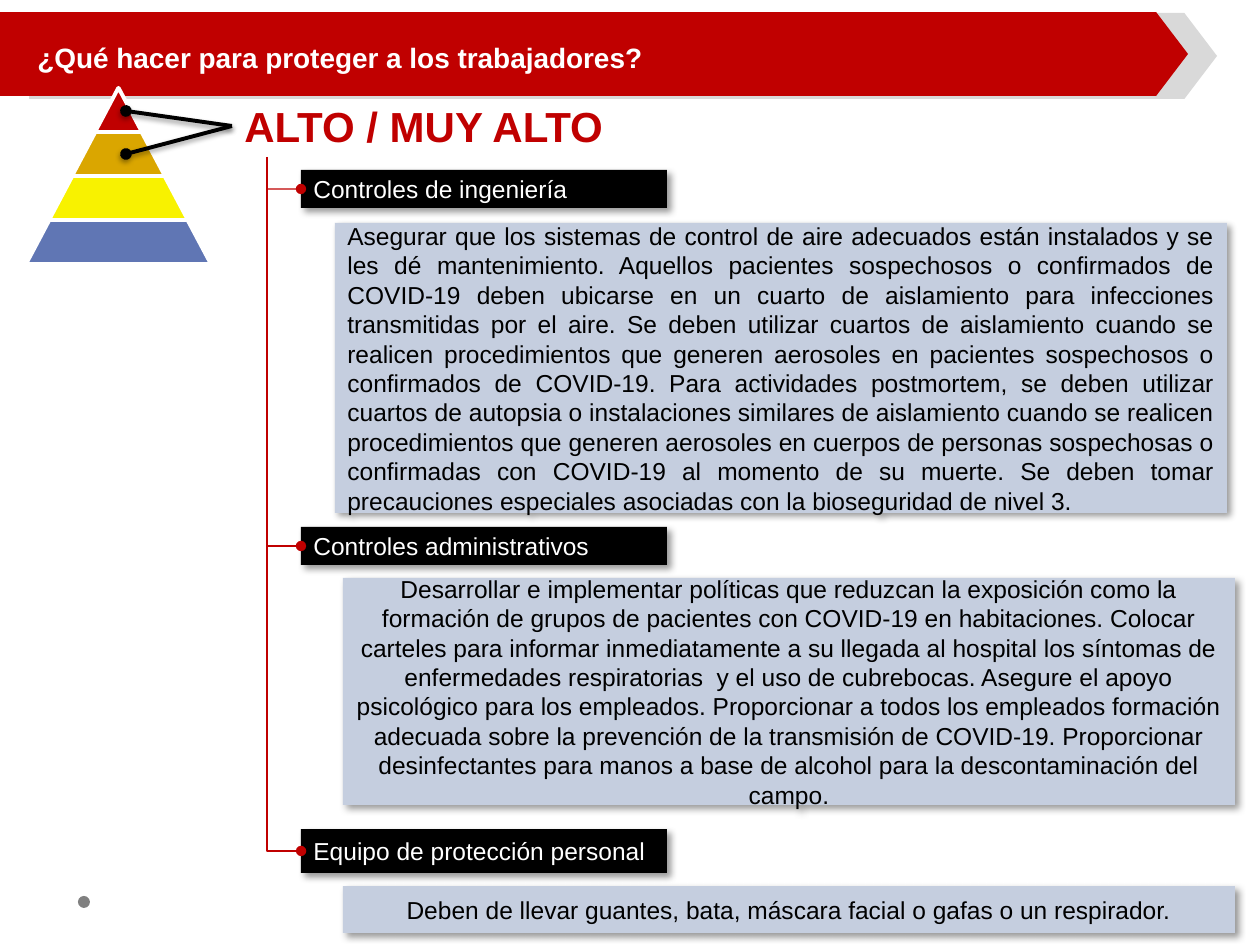
from dataclasses import dataclass
from typing import Optional

from lxml.etree import SubElement
from pptx import Presentation
from pptx.dml.color import RGBColor
from pptx.enum.shapes import MSO_CONNECTOR, MSO_SHAPE
from pptx.enum.text import MSO_ANCHOR, MSO_AUTO_SIZE, PP_ALIGN
from pptx.oxml.ns import qn
from pptx.util import Emu, Pt

PIXELS_PER_INCH = 126
RED = RGBColor(0xC0, 0x00, 0x00)
BLACK = RGBColor(0x00, 0x00, 0x00)
WHITE = RGBColor(0xFF, 0xFF, 0xFF)
LIGHT_GRAY = RGBColor(0xD9, 0xD9, 0xD9)
GRAY = RGBColor(0x80, 0x80, 0x80)
OCHRE = RGBColor(0xDA, 0xA6, 0x00)
YELLOW = RGBColor(0xF8, 0xF2, 0x00)
BLUE = RGBColor(0x60, 0x76, 0xB4)
PALE_BLUE = RGBColor(0xC5, 0xCE, 0xDF)


@dataclass(frozen=True)
class Box:
    left: int
    top: int
    width: int
    height: int


@dataclass(frozen=True)
class Shadow:
    opacity: int
    blur: float
    distance: float
    angle: int


@dataclass(frozen=True)
class Control:
    title: str
    title_box: Box
    body: str
    body_box: Box
    alignment: PP_ALIGN


@dataclass(frozen=True)
class Level:
    width: int
    color: RGBColor


BOX_SHADOW = Shadow(40, 4, 3, 45)
POINTER_SHADOW = Shadow(38, 3.1, 1.6, 90)
PYRAMID_CENTER = 119
PYRAMID_TOP = 88
LEVEL_HEIGHT = 44
TRUNK_X = 267
TRUNK_TOP = 157

LEVELS = [Level(47, RED), Level(93, OCHRE), Level(139, YELLOW), Level(185, BLUE)]

CONTROLS = [
    Control(
        "Controles de ingeniería",
        Box(301, 170, 366, 38),
        "Asegurar que los sistemas de control de aire adecuados están instalados y se les dé "
        "mantenimiento. Aquellos pacientes sospechosos o confirmados de COVID-19 deben ubicarse "
        "en un cuarto de aislamiento para infecciones transmitidas por el aire. Se deben utilizar "
        "cuartos de aislamiento cuando se realicen procedimientos que generen aerosoles en "
        "pacientes sospechosos o confirmados de COVID-19. Para actividades postmortem, se deben "
        "utilizar cuartos de autopsia o instalaciones similares de aislamiento cuando se realicen "
        "procedimientos que generen aerosoles en cuerpos de personas sospechosas o confirmadas "
        "con COVID-19 al momento de su muerte. Se deben tomar precauciones especiales asociadas "
        "con la bioseguridad de nivel 3.",
        Box(335, 223, 892, 290),
        PP_ALIGN.JUSTIFY,
    ),
    Control(
        "Controles administrativos",
        Box(301, 527, 366, 38),
        "Desarrollar e implementar políticas que reduzcan la exposición como la formación de "
        "grupos de pacientes con COVID-19 en habitaciones. Colocar carteles para informar "
        "inmediatamente a su llegada al hospital los síntomas de enfermedades respiratorias  y "
        "el uso de cubrebocas. Asegure el apoyo psicológico para los empleados. Proporcionar a "
        "todos los empleados formación adecuada sobre la prevención de la transmisión de "
        "COVID-19. Proporcionar desinfectantes para manos a base de alcohol para la "
        "descontaminación del campo.",
        Box(343, 578, 892, 227),
        PP_ALIGN.CENTER,
    ),
    Control(
        "Equipo de protección personal",
        Box(301, 829, 366, 44),
        "Deben de llevar guantes, bata, máscara facial o gafas o un respirador.",
        Box(343, 886, 892, 47),
        PP_ALIGN.CENTER,
    ),
]


def px(value: float) -> Emu:
    return Emu(round(value * 914400 / PIXELS_PER_INCH))


def place(box: Box) -> tuple:
    return px(box.left), px(box.top), px(box.width), px(box.height)


def add_shadow(effects, shadow: Shadow) -> None:
    outer = SubElement(
        effects, qn("a:outerShdw"), blurRad=str(Pt(shadow.blur)), dist=str(Pt(shadow.distance)),
        dir=str(shadow.angle * 60000), algn="ctr", rotWithShape="0",
    )
    color = SubElement(outer, qn("a:srgbClr"), val=str(BLACK))
    SubElement(color, qn("a:alpha"), val=str(shadow.opacity * 1000))


def add_filled(shapes, kind: MSO_SHAPE, box: Box, color: RGBColor,
               adjustment: Optional[float] = None, shadow: Optional[Shadow] = None):
    shape = shapes.add_shape(kind, *place(box))
    shape.fill.solid()
    shape.fill.fore_color.rgb = color
    shape.line.fill.background()
    shape.shadow.inherit = False
    if adjustment is not None:
        shape.adjustments[0] = adjustment
    if shadow:
        add_shadow(shape._element.spPr.find(qn("a:effectLst")), shadow)
    return shape


def write(shape, text: str, size: int, color: RGBColor, alignment: PP_ALIGN,
          bold: bool = False, anchor: MSO_ANCHOR = MSO_ANCHOR.MIDDLE) -> None:
    frame = shape.text_frame
    frame.word_wrap = True
    frame.vertical_anchor = anchor
    paragraph = frame.paragraphs[0]
    paragraph.text = text
    paragraph.alignment = alignment
    paragraph.font.name = "Arial"
    paragraph.font.size = Pt(size)
    paragraph.font.bold = bold
    paragraph.font.color.rgb = color


def add_line(shapes, start: tuple, end: tuple, color: RGBColor, weight: float,
             shadow: Optional[Shadow] = None, kind: MSO_CONNECTOR = MSO_CONNECTOR.STRAIGHT):
    connector = shapes.add_connector(kind, *map(px, start + end))
    connector.line.color.rgb = color
    connector.line.width = Pt(weight)
    SubElement(connector.line._get_or_add_ln(), qn("a:tailEnd"), type="oval")
    effects = SubElement(connector._element.spPr, qn("a:effectLst"))
    if shadow:
        add_shadow(effects, shadow)
    return connector


def add_trunk(shapes, end_x: int, end_y: int) -> None:
    center_x, center_y = (TRUNK_X + end_x) / 2, (TRUNK_TOP + end_y) / 2
    half_length, half_reach = (end_y - TRUNK_TOP) / 2, (end_x - TRUNK_X) / 2
    trunk = add_line(
        shapes, (center_x + half_length, center_y - half_reach),
        (center_x - half_length, center_y + half_reach), RED, 0.75, kind=MSO_CONNECTOR.ELBOW,
    )
    properties = trunk._element.spPr
    properties.find(qn("a:xfrm")).set("rot", str(270 * 60000))
    properties.find(qn("a:prstGeom")).set("prst", "bentConnector2")


def add_pyramid(shapes) -> None:
    group = shapes.add_group_shape()
    for index, level in enumerate(LEVELS):
        box = Box(PYRAMID_CENTER - (level.width + 1) // 2, PYRAMID_TOP + index * LEVEL_HEIGHT,
                  level.width, LEVEL_HEIGHT)
        shape = add_filled(group.shapes, MSO_SHAPE.TRAPEZOID, box, level.color, 0.53)
        shape.line.color.rgb = WHITE
        shape.line.width = Pt(2.25)


def add_control(shapes, control: Control):
    label = add_filled(shapes, MSO_SHAPE.RECTANGLE, control.title_box, BLACK, shadow=BOX_SHADOW)
    write(label, control.title, 14, WHITE, PP_ALIGN.JUSTIFY)
    body = add_filled(shapes, MSO_SHAPE.RECTANGLE, control.body_box, PALE_BLUE, shadow=BOX_SHADOW)
    write(body, control.body, 14, BLACK, control.alignment)
    return label


def main() -> None:
    presentation = Presentation()
    presentation.slide_width, presentation.slide_height = px(1260), px(945)
    slide = presentation.slides.add_slide(presentation.slide_layouts[6])
    shapes = slide.shapes

    add_filled(shapes, MSO_SHAPE.OVAL, Box(78, 896, 12, 12), GRAY)
    add_filled(shapes, MSO_SHAPE.PENTAGON, Box(29, 13, 1188, 86), LIGHT_GRAY, 0.38)
    add_filled(shapes, MSO_SHAPE.PENTAGON, Box(0, 12, 1188, 84), RED, 0.38)
    title = shapes.add_textbox(*place(Box(25, 34, 1137, 47)))
    write(title, "¿Qué hacer para proteger a los trabajadores?", 16, WHITE, PP_ALIGN.LEFT,
          bold=True, anchor=MSO_ANCHOR.TOP)
    title.text_frame.auto_size = MSO_AUTO_SIZE.SHAPE_TO_FIT_TEXT

    add_pyramid(shapes)
    heading = shapes.add_textbox(*place(Box(232, 80, 427, 92)))
    write(heading, "ALTO / MUY ALTO", 24, RED, PP_ALIGN.JUSTIFY, bold=True)
    for target in ((126, 154), (126, 111)):
        add_line(shapes, (232, 126), target, BLACK, 2.25, POINTER_SHADOW)

    labels = [add_control(shapes, control) for control in CONTROLS]
    for control, label in zip(CONTROLS[:-1], labels):
        box = control.title_box
        middle = box.top + box.height / 2
        branch = add_line(shapes, (TRUNK_X, middle), (box.left, middle), RED, 0.75)
        branch.end_connect(label, 1)
    last = CONTROLS[-1].title_box
    add_trunk(shapes, last.left, last.top + last.height // 2)

    presentation.save("out.pptx")


if __name__ == "__main__":
    main()
